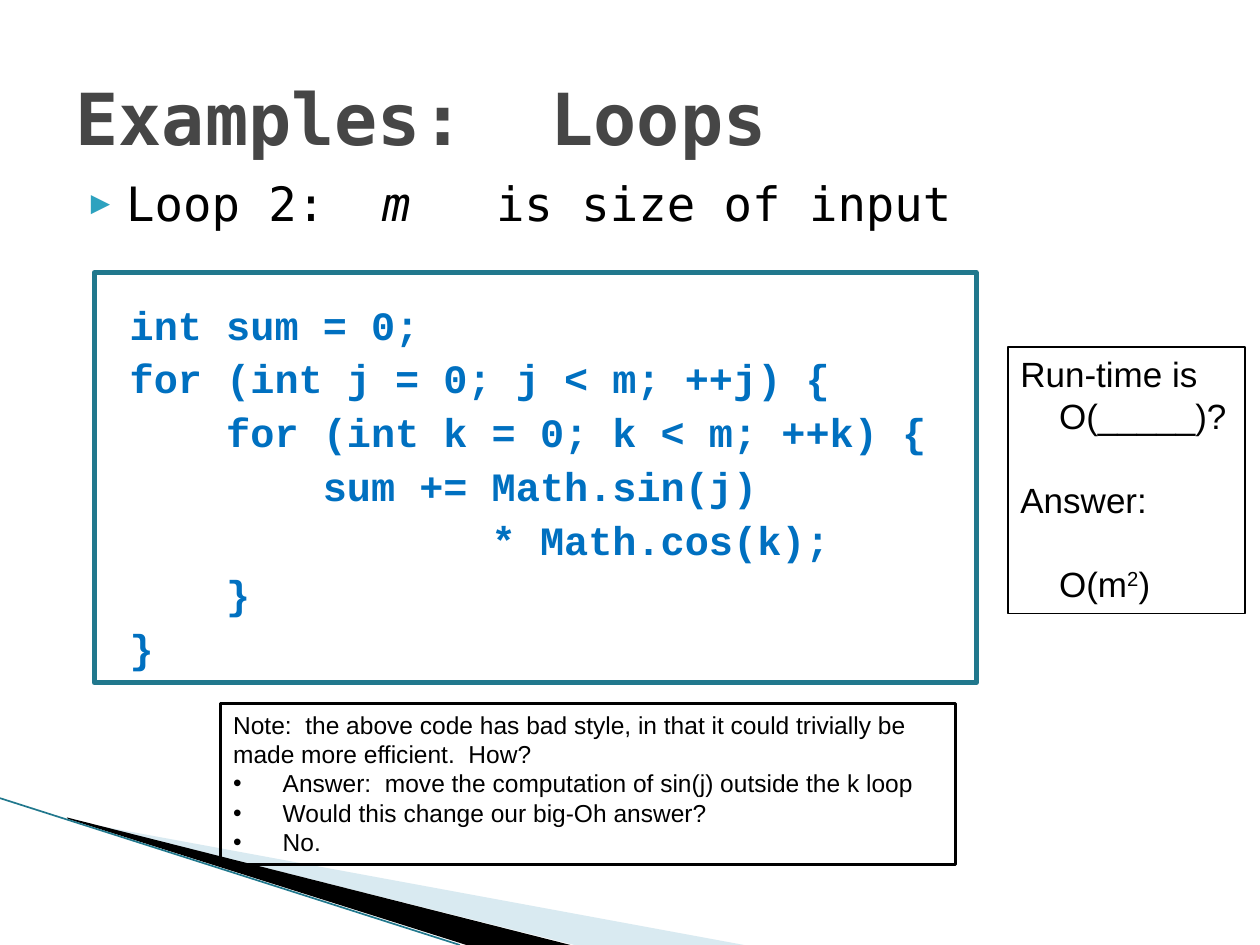
from lxml import etree
from pptx import Presentation
from pptx.dml.color import RGBColor
from pptx.enum import shapes, text
from pptx.oxml import ns
from pptx.util import Cm, Pt

MONO = "DejaVu Sans Mono"
CODE = """int sum = 0;
for (int j = 0; j < m; ++j) {
    for (int k = 0; k < m; ++k) {
        sum += Math.sin(j)
               * Math.cos(k);
    }
}"""


def paint(part, color):
    part.solid()
    part.fore_color.rgb = RGBColor.from_string(color)


def sub(node, tag, **attrs):
    return etree.SubElement(node, ns.qn(tag), **attrs)


def mark(par, char, color, font, scale=100):
    props = par._p.get_or_add_pPr()
    sub(sub(props, "a:buClr"), "a:srgbClr", val=color)
    sub(props, "a:buSzPct", val=str(scale * 1000))
    sub(props, "a:buFont", typeface=font)
    sub(props, "a:buChar", char=char)


def write(frame, *runs, size=14, font="Arial", color="000000", bold=False,
          gap=0, left=0, hang=0, level=0, bullet=None):
    par = frame.paragraphs[0]
    if par.runs:
        par = frame.add_paragraph()
    par.level = level
    par.alignment = text.PP_ALIGN.LEFT
    props = par._p.get_or_add_pPr()
    props.set("marL", str(Cm(left)))
    props.set("indent", str(-Cm(hang)))
    if bullet:
        mark(par, **bullet)
    else:
        sub(props, "a:buNone")
    par.space_before = Pt(gap)
    for item in runs:
        words, style = item if isinstance(item, tuple) else (item, "")
        run = par.add_run()
        run.text = words
        run.font.size = Pt(size)
        run.font.name = font
        run.font.bold = bold
        run.font.italic = style == "italic"
        paint(run.font.fill, color)
        if style == "super":
            run.font._element.set("baseline", "30000")


def place(holder, left, top, width, height, anchor):
    holder.left, holder.top = Cm(left), Cm(top)
    holder.width, holder.height = Cm(width), Cm(height)
    frame = holder.text_frame
    frame.auto_size = text.MSO_AUTO_SIZE.NONE
    frame.vertical_anchor = anchor
    holder.element.getparent().append(holder.element)
    return frame


def box(slide, left, top, width, height, color, weight):
    rect = slide.shapes.add_shape(shapes.MSO_SHAPE.RECTANGLE,
                                  Cm(left), Cm(top), Cm(width), Cm(height))
    rect.shadow.inherit = False
    rect.fill.background()
    paint(rect.line.fill, color)
    rect.line.width = Pt(weight)
    frame = rect.text_frame
    frame.word_wrap = True
    frame.vertical_anchor = text.MSO_ANCHOR.TOP
    return frame


def wedge(slide, points, color, alpha=100):
    spots = [(Cm(x), Cm(y)) for x, y in points]
    pen = slide.shapes.build_freeform(*spots[0])
    pen.add_line_segments(spots[1:], close=True)
    form = pen.convert_to_shape()
    form.shadow.inherit = False
    form.line.fill.background()
    paint(form.fill, color)
    if alpha < 100:
        tone = form.element.spPr.find(".//" + ns.qn("a:srgbClr"))
        sub(tone, "a:alpha", val=str(alpha * 1000))


def stroke(slide, x1, y1, x2, y2, color, weight):
    line = slide.shapes.add_connector(shapes.MSO_CONNECTOR.STRAIGHT,
                                      Cm(x1), Cm(y1), Cm(x2), Cm(y2))
    paint(line.line.fill, color)
    line.line.width = Pt(weight)
    sub(line.element.spPr, "a:effectLst")


def main():
    deck = Presentation()
    deck.slide_width, deck.slide_height = Cm(25.4), Cm(19.05)
    slide = deck.slides.add_slide(deck.slide_layouts[1])
    title, body = slide.placeholders

    wedge(slide, [(1.4, 16.54), (15.0, 19.05), (11.58, 19.05), (1.4, 16.51)],
          "A0CBDC", 40)
    wedge(slide, [(1.35, 16.48), (11.5, 19.05), (9.4, 19.05), (1.37, 16.51)],
          "000000")
    stroke(slide, 0, 16.09, 9.27, 19.05, "21788D", 0.95)

    frame = place(body, 1.27, 3.38, 22.86, 12.57, text.MSO_ANCHOR.TOP)
    write(frame, "Loop 2:  ", ("m", "italic"), "   is size of input",
          size=27, font=MONO, left=1.02, hang=0.71,
          bullet=dict(char="▶", color="2DA2BF", font=MONO, scale=68))
    for row, code in enumerate(CODE.splitlines()):
        write(frame, code, size=23, font="Courier New", color="0070C0",
              bold=True, level=1, left=1.09, gap=3.2 if row else 39.5)

    frame = place(title, 1.27, 0.76, 22.86, 3.18, text.MSO_ANCHOR.MIDDLE)
    write(frame, "Examples:  Loops", size=41, font=MONO, color="464646",
          bold=True)

    box(slide, 1.9, 5.5, 17.78, 8.26, "21788D", 3)

    note = box(slide, 4.45, 14.18, 14.81, 3.25, "000000", 2)
    write(note, "Note:  the above code has bad style, in that it could "
                "trivially be made more efficient.  How?")
    for line in ("Answer:  move the computation of sin(j) outside the k loop",
                 "Would this change our big-Oh answer?",
                 "No."):
        write(note, line, left=1, hang=1,
              bullet=dict(char="•", color="000000", font="Arial"))

    side = box(slide, 20.32, 6.99, 4.78, 5.38, "000000", 1)
    write(side, "Run-time is", size=20)
    write(side, "O(_____)?", size=20, left=0.78)
    write(side, "Answer:", size=20, gap=23.8)
    write(side, "O(m", ("2", "super"), ")", size=20, left=0.78, gap=23.8)

    deck.save("out.pptx")


if __name__ == "__main__":
    main()
